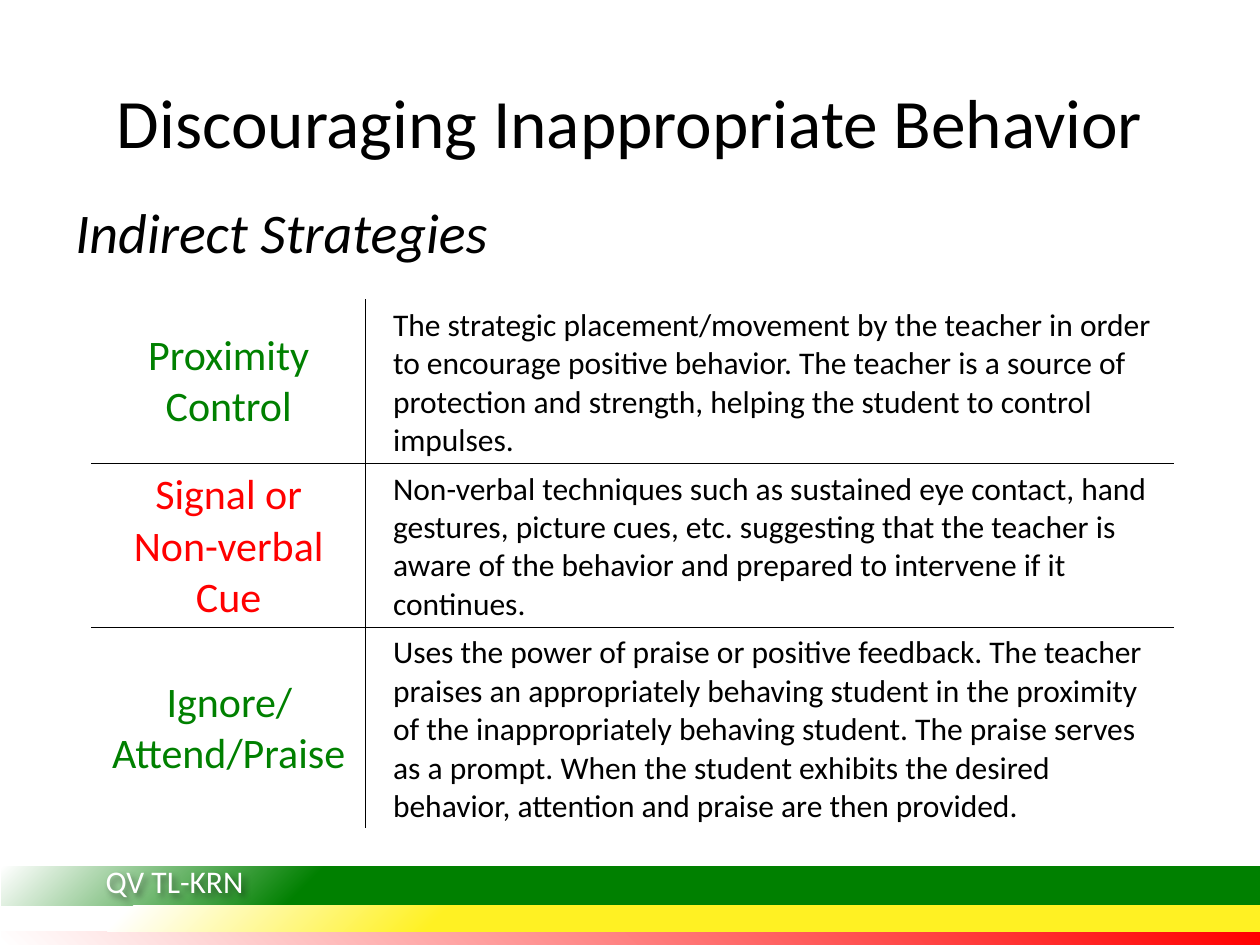
import dataclasses

import pptx
import pptx.dml.color
import pptx.enum.shapes
import pptx.enum.text
import pptx.oxml
import pptx.oxml.ns
import pptx.util

Inches = pptx.util.Inches
Pt = pptx.util.Pt
ALIGN = pptx.enum.text.PP_ALIGN
MIDDLE = pptx.enum.text.MSO_ANCHOR.MIDDLE
NS = pptx.oxml.ns.nsdecls("a")
FONT = "Calibri"
BLACK, WHITE, GREEN, RED = "000000", "FFFFFF", "008000", "FF0000"


@dataclasses.dataclass
class Band:
    """A footer stripe with a gradient spreading from one right-hand corner."""
    top: float
    height: float
    stops: list[tuple[int, str]]
    focus: str


@dataclasses.dataclass
class Strategy:
    """One table row: a strategy and what it means."""
    name: str
    color: str
    description: str


BOTTOM_RIGHT = 'l="100000" t="100000"'
TOP_RIGHT = 'l="100000" b="100000"'
BANDS = [
    Band(7.39, 0.12, [(0, RED), (100, WHITE)], TOP_RIGHT),
    Band(6.88, 0.31, [(75, GREEN), (100, WHITE)], BOTTOM_RIGHT),
    Band(7.19, 0.2, [(65, "FFF123"), (90, WHITE)], BOTTOM_RIGHT),
]
STRATEGIES = [
    Strategy("Proximity Control", GREEN,
             "The strategic placement/movement by the teacher in order to encourage positive "
             "behavior. The teacher is a source of protection and strength, helping the student "
             "to control impulses."),
    Strategy("Signal or\vNon-verbal Cue", RED,
             "Non-verbal techniques such as sustained eye contact, hand gestures, picture cues, "
             "etc. suggesting that the teacher is aware of the behavior and prepared to "
             "intervene if it continues."),
    Strategy("Ignore/Attend/Praise", GREEN,
             "Uses the power of praise or positive feedback. The teacher praises an appropriately "
             "behaving student in the proximity of the inappropriately behaving student. The "
             "praise serves as a prompt. When the student exhibits the desired behavior, "
             "attention and praise are then provided."),
]


def rgb(color: str) -> pptx.dml.color.RGBColor:
    return pptx.dml.color.RGBColor.from_string(color)


def write(tf, text: str, size: float, color: str, align=ALIGN.LEFT, italic: bool = False) -> None:
    tf.text = text
    tf.word_wrap = True
    for p in tf.paragraphs:
        p.alignment = align
        for r in p.runs:
            r.font.name = FONT
            r.font.size = Pt(size)
            r.font.italic = italic
            r.font.color.rgb = rgb(color)


def add_text(s, left: float, top: float, width: float, height: float, text: str,
             size: float, color: str, **style):
    sp = s.shapes.add_textbox(Inches(left), Inches(top), Inches(width), Inches(height))
    write(sp.text_frame, text, size, color, **style)
    return sp


def add_band(s, band: Band) -> None:
    sp = s.shapes.add_shape(pptx.enum.shapes.MSO_SHAPE.RECTANGLE, Inches(0.01),
                            Inches(band.top), Inches(10), Inches(band.height))
    sp.shadow.inherit = False
    sp.line.fill.background()
    stops = "".join(f'<a:gs pos="{pos * 1000}"><a:srgbClr val="{color}"/></a:gs>'
                    for pos, color in band.stops)
    fill = pptx.oxml.parse_xml(
        f'<a:gradFill {NS} rotWithShape="1"><a:gsLst>{stops}</a:gsLst>'
        f'<a:path path="circle"><a:fillToRect {band.focus}/></a:path></a:gradFill>')
    sp.element.spPr.find(pptx.oxml.ns.qn("a:prstGeom")).addnext(fill)


def add_shadow(sp) -> None:
    sp.element.spPr.append(pptx.oxml.parse_xml(
        f'<a:effectLst {NS}><a:outerShdw blurRad="50800" dist="38100" dir="2700000">'
        '<a:srgbClr val="000000"><a:alpha val="43000"/></a:srgbClr></a:outerShdw></a:effectLst>'))


def format_cell(cell, edges: str) -> None:
    cell.vertical_anchor = MIDDLE
    tc_pr = cell._tc.get_or_add_tcPr()
    for edge in edges:
        tc_pr.append(pptx.oxml.parse_xml(
            f'<a:ln{edge} {NS} w="12700"><a:solidFill><a:srgbClr val="{BLACK}"/>'
            f'</a:solidFill></a:ln{edge}>'))
    cell.fill.background()


def add_strategies(s, strategies: list[Strategy]) -> None:
    table = s.shapes.add_table(len(strategies), 2, Inches(0.73), Inches(2.38),
                               Inches(8.58), Inches(3.84)).table
    table.first_row = table.horz_banding = False
    table.columns[0].width, table.columns[1].width = Inches(2.17), Inches(6.41)
    for i, strategy in enumerate(strategies):
        table.rows[i].height = Inches(1.28)
        name, description = table.rows[i].cells
        write(name.text_frame, strategy.name, 24, strategy.color, ALIGN.CENTER)
        write(description.text_frame, strategy.description, 18, BLACK)
        description.text_frame.paragraphs[0]._p.get_or_add_pPr().set("marL", str(Inches(0.12)))
        rules = ("T" if i else "") + ("B" if i < len(strategies) - 1 else "")
        format_cell(name, "R" + rules)
        format_cell(description, "L" + rules)


def main() -> None:
    """Build the strategies slide."""
    prs = pptx.Presentation()
    prs.slide_width, prs.slide_height = Inches(10), Inches(7.5)
    s = prs.slides.add_slide(prs.slide_layouts[6])
    for band in BANDS:
        add_band(s, band)
    add_shadow(add_text(s, 0.74, 6.79, 1.92, 0.4, "QV TL-KRN", 18, WHITE))
    add_strategies(s, STRATEGIES)
    add_text(s, 0.5, 1.52, 4.44, 0.94, "Indirect Strategies", 32, BLACK, italic=True)
    title = add_text(s, 0.5, 0.33, 9, 1.25, "Discouraging Inappropriate Behavior",
                     39.6, BLACK, align=ALIGN.CENTER)
    title.text_frame.vertical_anchor = MIDDLE
    prs.save("out.pptx")


if __name__ == "__main__":
    main()
